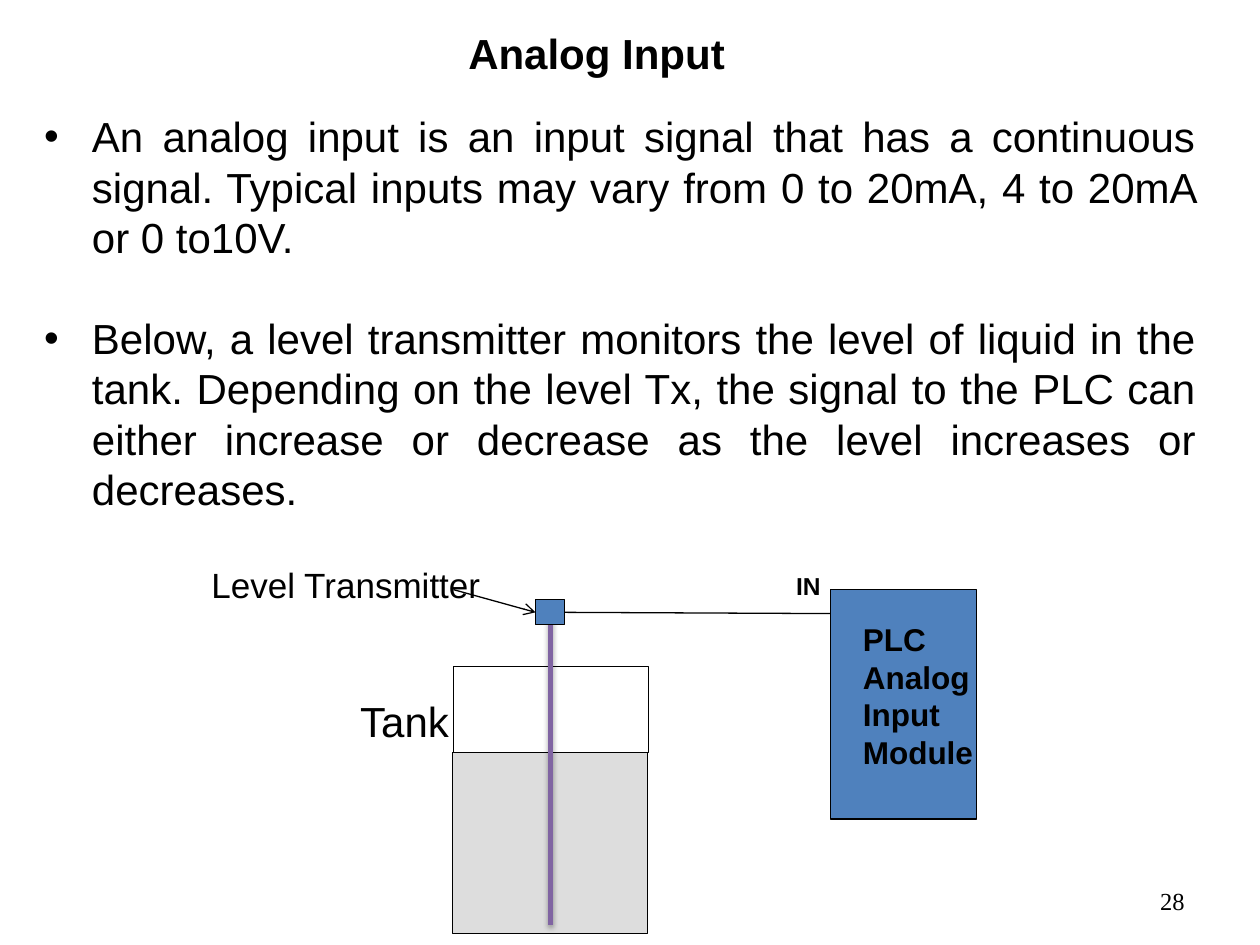
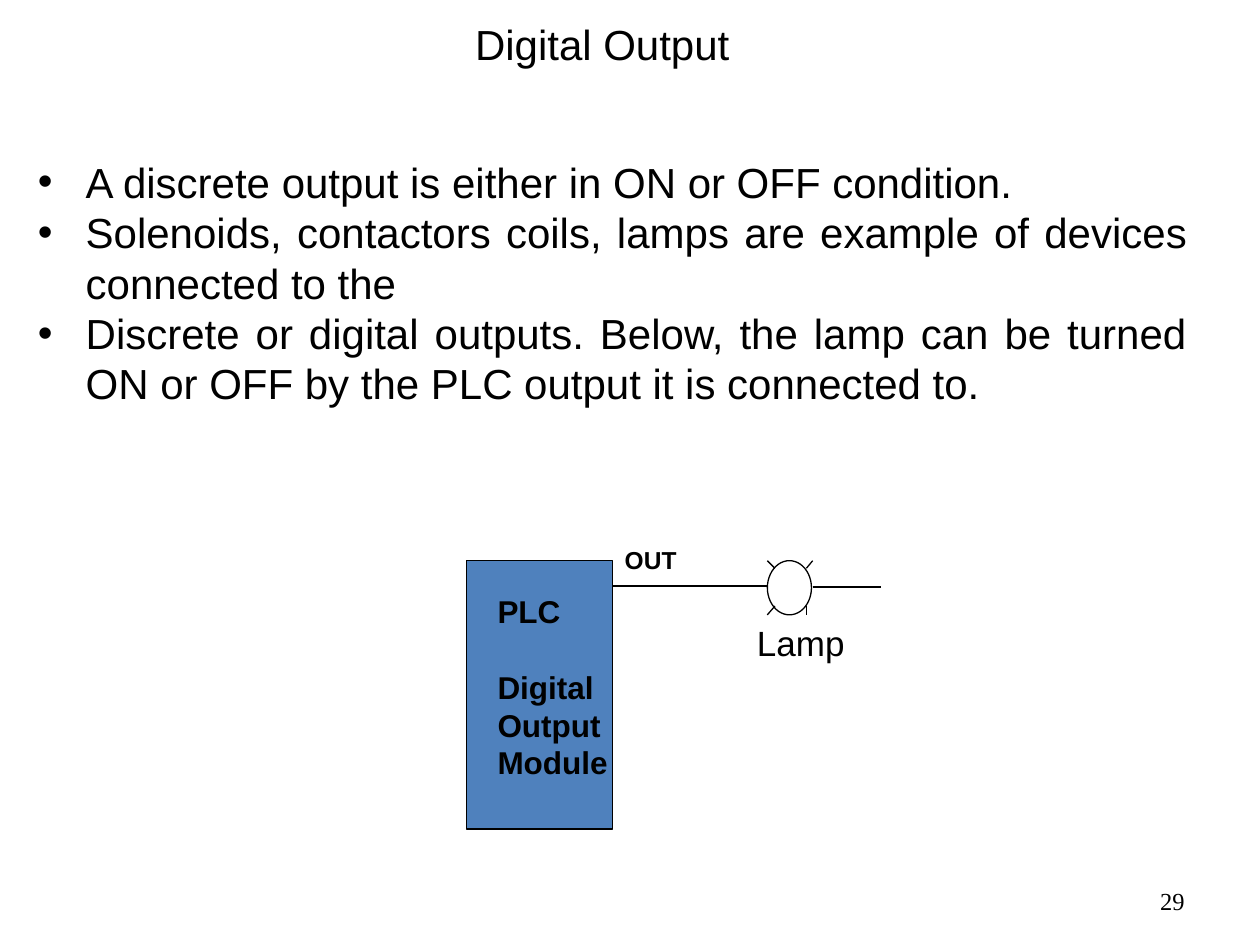
from lxml.etree import SubElement
from pptx import Presentation
from pptx.dml.color import RGBColor
from pptx.enum.shapes import MSO_CONNECTOR, MSO_SHAPE
from pptx.enum.text import MSO_ANCHOR, MSO_AUTO_SIZE, PP_ALIGN
from pptx.oxml.ns import qn
from pptx.util import Inches, Pt

BLACK = RGBColor(0, 0, 0)
WHITE = RGBColor(255, 255, 255)
BLUE = RGBColor(0x4F, 0x81, 0xBD)
GREY = RGBColor(0xDD, 0xDD, 0xDD)
PURPLE = RGBColor(0x80, 0x64, 0xA2)
RECT, OVAL = MSO_SHAPE.RECTANGLE, MSO_SHAPE.OVAL
LEFT, RIGHT = 1, 3

PAGES = [
    {
        "title": ("Analog Input", (3.61, 0.17, 2.25, 0.5), True),
        "body": ((0.25, 0.83, 9.34, 3.33), 28.8, [
            "An analog input is an input signal that has a continuous signal. "
            "Typical inputs may vary from 0 to 20mA, 4 to 20mA or 0 to10V. ",
            "Below, a level transmitter monitors the level of liquid in the tank. "
            "Depending on the level Tx, the signal to the PLC can either increase "
            "or decrease as the level increases or decreases.",
        ]),
        "number": "28",
    },
    {
        "title": ("Digital Output", (3.66, 0.1, 2.24, 0.5), False),
        "body": ((0.2, 1.19, 9.32, 2.12), 0, [
            "A discrete output is either in ON or OFF condition. ",
            "Solenoids, contactors coils, lamps are example of devices "
            "connected to the ",
            "Discrete or digital outputs. Below, the lamp can be turned ON or OFF "
            "by the PLC output it is connected to.",
        ]),
        "number": "29",
    },
]
RAYS = [
    ((6.4, 4.51), (6.45, 4.45)),
    ((6.09, 4.88), (6.15, 4.81)),
    ((6.15, 4.51), (6.09, 4.45)),
    ((6.4, 4.81), (6.4, 4.88)),
]


def place(shape, box):
    shape.left, shape.top, shape.width, shape.height = map(Inches, box)


def write(frame, lines, size, bold=False, align=PP_ALIGN.LEFT, font="Arial"):
    for i, line in enumerate(lines):
        para = frame.paragraphs[0] if i == 0 else frame.add_paragraph()
        para.alignment = align
        para.space_before = Pt(0)
        run = para.add_run()
        run.text = line
        run.font.name, run.font.size, run.font.bold = font, Pt(size), bold
        run.font.color.rgb = BLACK


def label(slide, box, lines, size, bold=False, **look):
    frame = slide.shapes.add_textbox(*map(Inches, box)).text_frame
    frame.word_wrap = False
    write(frame, lines, size, bold, **look)
    return frame


def block(slide, box, fill=None, kind=RECT):
    shape = slide.shapes.add_shape(kind, *map(Inches, box))
    shape.shadow.inherit = False
    if fill is None:
        shape.fill.background()
    else:
        shape.fill.solid()
        shape.fill.fore_color.rgb = fill
    shape.line.color.rgb, shape.line.width = BLACK, Pt(0.75)
    return shape


def wire(slide, start, end, color=BLACK, width=0.75):
    line = slide.shapes.add_connector(
        MSO_CONNECTOR.STRAIGHT, *map(Inches, start + end))
    line.line.color.rgb, line.line.width = color, Pt(width)
    SubElement(line._element.spPr, qn("a:effectLst"))
    return line


def shade(line):
    effects = line._element.spPr.find(qn("a:effectLst"))
    cast = SubElement(effects, qn("a:outerShdw"), blurRad=str(Pt(3.1)),
                      dist=str(Pt(1.8)), dir="5400000", rotWithShape="0")
    color = SubElement(cast, qn("a:srgbClr"), val=str(BLACK))
    SubElement(color, qn("a:alpha"), val="35000")


def base(deck, page):
    slide = deck.slides.add_slide(deck.slide_layouts[1])
    text, box, bold = page["title"]
    title = slide.shapes.title
    place(title, box)
    frame = title.text_frame
    frame.auto_size, frame.word_wrap = MSO_AUTO_SIZE.NONE, False
    frame.vertical_anchor = MSO_ANCHOR.TOP
    write(frame, [text], 24, bold, PP_ALIGN.CENTER)

    box, gap, items = page["body"]
    body = slide.placeholders[1]
    place(body, box)
    frame = body.text_frame
    frame.auto_size = MSO_AUTO_SIZE.NONE
    write(frame, items, 24, align=PP_ALIGN.JUSTIFY)
    for i, para in enumerate(frame.paragraphs):
        para.space_before = Pt(gap if i else 0)
        props = para._p.get_or_add_pPr()
        props.set("marL", str(Inches(0.38)))
        props.set("indent", str(-Inches(0.38)))
        SubElement(props, qn("a:buFont"), typeface="Arial")
        SubElement(props, qn("a:buChar"), char="•")

    frame = label(slide, (7.17, 6.95, 2.33, 0.4), [page["number"]], 14,
                  align=PP_ALIGN.RIGHT, font="Times New Roman")
    frame.word_wrap = True
    frame.vertical_anchor = MSO_ANCHOR.MIDDLE
    return slide


def draw_tank(slide):
    block(slide, (3.59, 5.97, 1.55, 1.44), GREY)
    block(slide, (3.6, 5.29, 1.55, 0.68))
    shade(wire(slide, (4.37, 4.86), (4.37, 7.34), PURPLE, 3))
    gauge = block(slide, (4.25, 4.76, 0.23, 0.2), BLUE)
    wire(slide, (4.48, 4.86), (6.59, 4.87)).begin_connect(gauge, RIGHT)
    block(slide, (6.59, 4.68, 1.16, 1.82), BLUE)
    label(slide, (6.22, 4.48, 0.4, 0.34), ["IN"], 14, True)
    label(slide, (6.75, 4.87, 1.09, 1.31),
          ["PLC", "Analog", "Input", "Module"], 18, True)
    label(slide, (2.76, 5.47, 0.91, 0.5), ["Tank"], 24)
    arrow = wire(slide, (3.6, 4.68), (4.25, 4.86))
    arrow.end_connect(gauge, LEFT)
    SubElement(arrow.line._get_or_add_ln(), qn("a:tailEnd"), type="arrow")
    label(slide, (1.58, 4.42, 2.36, 0.44), ["Level Transmitter"], 20)


def draw_lamp(slide):
    block(slide, (3.7, 4.45, 1.16, 2.13), BLUE)
    wire(slide, (4.86, 4.65), (6.09, 4.65))
    label(slide, (4.86, 4.28, 0.62, 0.34), ["OUT"], 14, True)
    frame = label(slide, (3.85, 4.65, 1.09, 1.62),
                  ["PLC", "Digital", "Output", "Module"], 18, True)
    frame.paragraphs[1].space_before = Pt(21.6)
    block(slide, (6.09, 4.45, 0.35, 0.43), WHITE, OVAL)
    for start, end in RAYS:
        wire(slide, start, end)
    wire(slide, (6.45, 4.66), (6.99, 4.66))
    label(slide, (5.91, 4.88, 0.9, 0.44), ["Lamp"], 20)


def main():
    """Build the two slides on analog input and digital output."""
    deck = Presentation()
    deck.slide_width, deck.slide_height = Inches(10), Inches(7.5)
    for page, draw in zip(PAGES, (draw_tank, draw_lamp)):
        draw(base(deck, page))
    deck.save("out.pptx")


if __name__ == "__main__":
    main()
